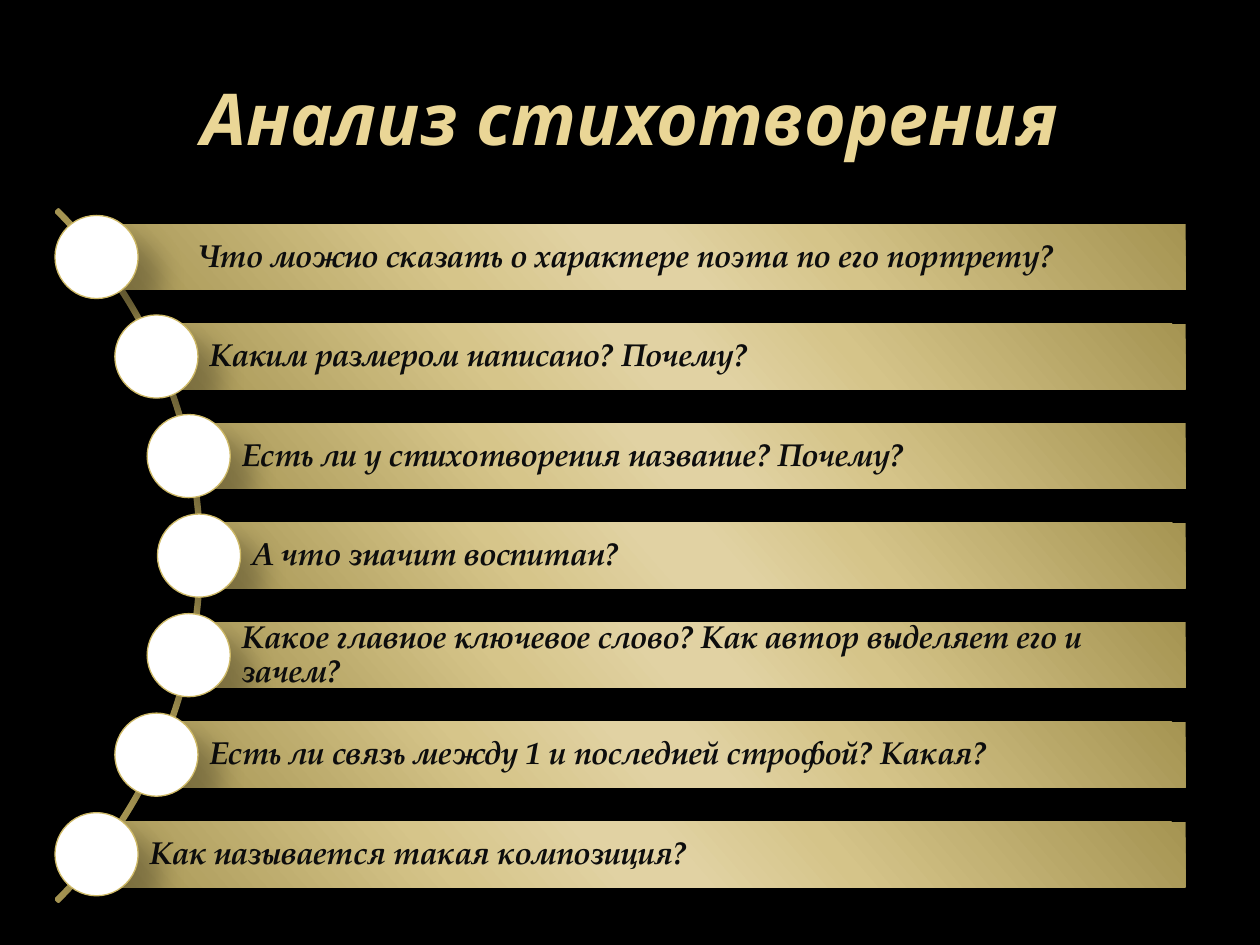
from math import sqrt

from lxml import etree
from pptx import Presentation
from pptx.dml.color import RGBColor
from pptx.enum.shapes import MSO_SHAPE as Kind
from pptx.enum.text import MSO_ANCHOR as Anchor, PP_ALIGN as Align
from pptx.oxml import parse_xml
from pptx.oxml.ns import nsdecls, qn
from pptx.util import Inches, Pt

LINES = [
    "Что можно сказать о характере поэта по его портрету?",
    "Каким размером написано? Почему?",
    "Есть ли у стихотворения название? Почему?",
    "А что значит воспитан?",
    "Какое главное ключевое слово? Как автор выделяет его и зачем?",
    "Есть ли связь между 1 и последней строфой? Какая?",
    "Как называется такая композиция?",
]
GOLD = [(0, "A59452"), (33, "D5C489"), (47, "E1D2A3"),
        (53, "E1D2A3"), (68, "D6C58A"), (100, "A59452")]


def color(code):
    return RGBColor.from_string(code)


def write(shape, text, font, size, ink, align=Align.LEFT, left=0.05, edge=0.05, space=1.0):
    frame = shape.text_frame
    frame.word_wrap = True
    frame.vertical_anchor = Anchor.MIDDLE
    frame.margin_left = Inches(left)
    frame.margin_right = frame.margin_top = frame.margin_bottom = Inches(edge)
    par = frame.paragraphs[0]
    par.alignment, par.line_spacing = align, space
    run = par.add_run()
    run.text = text
    run.font.name, run.font.size = font, Pt(size)
    run.font.bold = run.font.italic = True
    run.font.color.rgb = color(ink)


class Deck:
    head = "Noto Sans"
    body = "TeX Gyre Pagella"

    def __init__(self):
        self.show = Presentation()
        self.show.slide_width, self.show.slide_height = Inches(10), Inches(7.5)
        self.slide = self.show.slides.add_slide(self.show.slide_layouts[6])
        back = self.slide.background.fill
        back.solid()
        back.fore_color.rgb = color("000000")

    def shape(self, kind, box, fill=None, line=None, width=1):
        item = self.slide.shapes.add_shape(kind, *map(Inches, box))
        item.shadow.inherit = False
        if fill:
            item.fill.solid()
            item.fill.fore_color.rgb = color(fill)
        else:
            item.fill.background()
        if line:
            item.line.color.rgb = color(line)
            item.line.width = Pt(width)
        else:
            item.line.fill.background()
        return item

    def shade(self, item):
        """Add a soft shadow down and to the right."""
        effects = item.element.spPr.find(qn("a:effectLst"))
        effects.append(parse_xml(
            f'<a:outerShdw {nsdecls("a")} blurRad="{Pt(15)}" dist="{Pt(18)}" '
            'dir="2700000" sy="90000" rotWithShape="0"><a:srgbClr val="000000">'
            '<a:alpha val="26000"/></a:srgbClr></a:outerShdw>'))

    def blend(self, item, stops, angle):
        """Swap the fill for a gradient of many stops."""
        old = item.element.spPr.find(qn("a:noFill"))
        grad = parse_xml(f'<a:gradFill {nsdecls("a")} rotWithShape="1"><a:gsLst/>'
                         f'<a:lin ang="{angle * 60000}" scaled="1"/></a:gradFill>')
        for place, code in stops:
            stop = etree.SubElement(grad[0], qn("a:gs"), pos=str(place * 1000))
            etree.SubElement(stop, qn("a:srgbClr"), val=code)
        old.getparent().replace(old, grad)

    def title(self, text, box):
        item = self.slide.shapes.add_textbox(*map(Inches, box))
        write(item, text, self.head, 41, "EAD696", align=Align.CENTER)

    def arc(self, box):
        item = self.shape(Kind.BLOCK_ARC, box, line="A59452", width=2)
        for spot, value in enumerate((189, 27, 0.003)):
            item.adjustments[spot] = value

    def bar(self, text, box, left):
        item = self.shape(Kind.RECTANGLE, box)
        self.blend(item, GOLD, 139)
        self.shade(item)
        write(item, text, self.body, 18, "0D0D0D", left=left, space=0.9)

    def dot(self, x, y, size):
        box = (x - size / 2, y - size / 2, size, size)
        self.shade(self.shape(Kind.OVAL, box, "FFFFFF", "CEB966", 0.75))


def main():
    deck = Deck()
    deck.title("Анализ стихотворения", (0.5, 0.3, 9, 1.25))
    deck.arc((-6.16, 0.53, 7.76, 7.76))

    # Dots sit on a circle round (hub, mid); each bar starts at its dot.
    hub, mid, radius = -2.28, 4.41, 3.86
    step, right, high = 0.79, 9.41, 0.52
    for row, text in enumerate(LINES):
        drop = (row - len(LINES) // 2) * step
        x, y = hub + sqrt(radius ** 2 - drop ** 2), mid + drop
        left = 0.42 if row else 0.8
        deck.bar(text, (x, y - high / 2, right - x, high), left)
        deck.dot(x, y, 0.66)
    deck.show.save("out.pptx")


if __name__ == "__main__":
    main()
